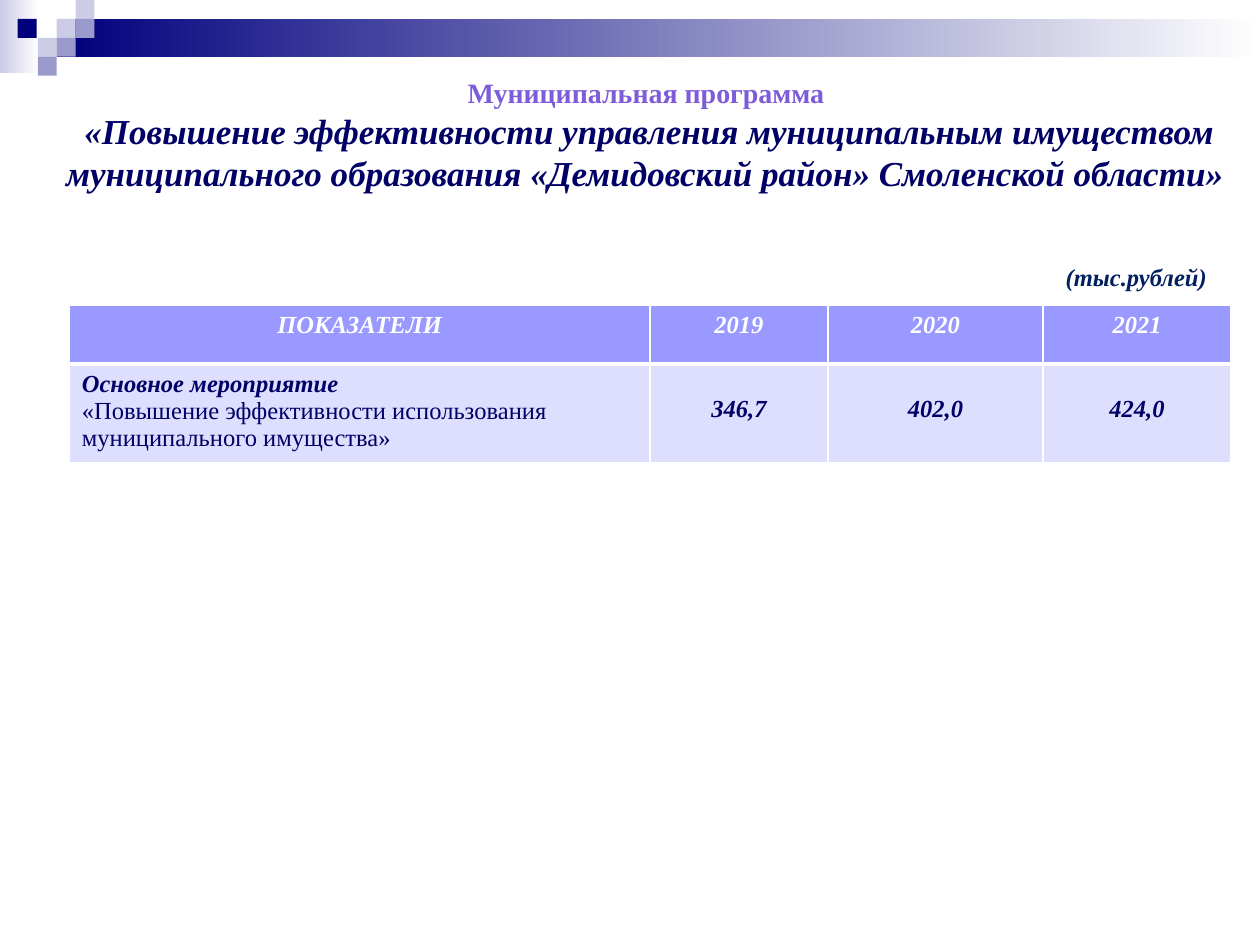
from lxml import etree
from pptx import Presentation
from pptx.dml.color import RGBColor
from pptx.enum import shapes, text
from pptx.oxml import ns
from pptx.util import Inches, Pt

FONT = "Times New Roman"
NAVY, PALE, MID, INK, WHITE = "00007D", "CCCCE6", "9999CC", "000066", "FFFFFF"
HEADER_FILL, BODY_FILL = "9999FF", "DEDEFF"
SQUARE = 0.15
SQUARES = [(0.45, 0.15, PALE), (0.6, 0, PALE), (0.6, 0.15, MID),
           (0.3, 0.3, PALE), (0.14, 0.15, NAVY), (0.45, 0.3, MID),
           (0.3, 0.45, MID)]
COLUMN_WIDTHS = [4.61, 1.41, 1.71, 1.49]
ROW_HEIGHTS = [0.47, 0.78]
HEADINGS = ["ПОКАЗАТЕЛИ", "2019", "2020", "2021"]
MEASURE = ["Основное мероприятие",
           "«Повышение эффективности использования муниципального имущества»"]
AMOUNTS = ["346,7", "402,0", "424,0"]


def rgb(value):
    return RGBColor.from_string(value)


def style(paragraph, size, color, bold=True, italic=True, align=None):
    paragraph.alignment = align
    for run in paragraph.runs:
        font = run.font
        font.name, font.size = FONT, Pt(size)
        font.bold, font.italic = bold, italic
        font.color.rgb = rgb(color)


def add_block(slide, left, top, width, height, start, end=None):
    block = slide.shapes.add_shape(
        shapes.MSO_SHAPE.RECTANGLE,
        Inches(left), Inches(top), Inches(width), Inches(height))
    block.shadow.inherit = False
    block.line.fill.background()
    if end:
        block.fill.gradient()
        block.fill.gradient_angle = 0
        for stop, color in zip(block.fill.gradient_stops, (start, end)):
            stop.color.rgb = rgb(color)
    else:
        block.fill.solid()
        block.fill.fore_color.rgb = rgb(start)


def add_decoration(slide):
    add_block(slide, 0, 0, 0.31, 0.58, PALE, WHITE)
    add_block(slide, 0.45, 0.15, 9.55, 0.3, NAVY, WHITE)
    for left, top, color in SQUARES:
        add_block(slide, left, top, SQUARE, SQUARE, color)


def set_title(slide):
    title = slide.shapes.title
    title.left, title.top = Inches(0.31), Inches(0.55)
    title.width, title.height = Inches(9.69), Inches(1.38)
    frame = title.text_frame
    frame.word_wrap = True
    frame.auto_size = text.MSO_AUTO_SIZE.NONE
    frame.vertical_anchor = text.MSO_ANCHOR.TOP
    frame.text = ("Муниципальная программа \n"
                  "«Повышение эффективности управления муниципальным имуществом "
                  "муниципального образования «Демидовский район» "
                  "Смоленской области» ")
    kind, name = frame.paragraphs
    style(kind, 16, "7D5CDA", italic=False, align=text.PP_ALIGN.CENTER)
    style(name, 20, INK, align=text.PP_ALIGN.CENTER)


def add_unit_note(slide):
    note = slide.shapes.add_textbox(
        Inches(8.36), Inches(2.03), Inches(1.33), Inches(0.34))
    frame = note.text_frame
    frame.word_wrap = False
    frame.text = "(тыс.рублей)"
    style(frame.paragraphs[0], 14, "002060")


def set_borders(cell, bottom):
    properties = cell._tc.get_or_add_tcPr()
    widths = {"a:lnL": 1, "a:lnR": 1, "a:lnT": 1, "a:lnB": bottom}
    for position, (side, width) in enumerate(widths.items()):
        line = etree.Element(ns.qn(side), w=str(Pt(width)))
        fill = etree.SubElement(line, ns.qn("a:solidFill"))
        etree.SubElement(fill, ns.qn("a:srgbClr"), val=WHITE)
        properties.insert(position, line)


def fill_cell(cell, content, fill, color, align=None, bottom=1):
    cell.fill.solid()
    cell.fill.fore_color.rgb = rgb(fill)
    set_borders(cell, bottom)
    cell.text_frame.text = content
    for paragraph in cell.text_frame.paragraphs:
        style(paragraph, 14, color, align=align)


def add_indicators(slide):
    table = slide.shapes.add_table(
        len(ROW_HEIGHTS), len(COLUMN_WIDTHS), Inches(0.55), Inches(2.42),
        Inches(sum(COLUMN_WIDTHS)), Inches(sum(ROW_HEIGHTS))).table
    for column, width in zip(table.columns, COLUMN_WIDTHS):
        column.width = Inches(width)
    for row, height in zip(table.rows, ROW_HEIGHTS):
        row.height = Inches(height)
    for index, heading in enumerate(HEADINGS):
        fill_cell(table.cell(0, index), heading, HEADER_FILL, WHITE,
                  text.PP_ALIGN.CENTER, bottom=3)
    measure = table.cell(1, 0)
    fill_cell(measure, "\n".join(MEASURE), BODY_FILL, INK)
    style(measure.text_frame.paragraphs[1], 14, INK, bold=False, italic=False)
    for index, amount in enumerate(AMOUNTS, start=1):
        cell = table.cell(1, index)
        fill_cell(cell, amount, BODY_FILL, INK, text.PP_ALIGN.CENTER)
        cell.vertical_anchor = text.MSO_ANCHOR.MIDDLE
        cell.margin_bottom = Inches(0.11)


def main():
    deck = Presentation()
    deck.slide_width, deck.slide_height = Inches(10), Inches(7.5)
    slide = deck.slides.add_slide(deck.slide_layouts[5])
    add_decoration(slide)
    set_title(slide)
    add_indicators(slide)
    add_unit_note(slide)
    deck.save("out.pptx")


if __name__ == "__main__":
    main()
